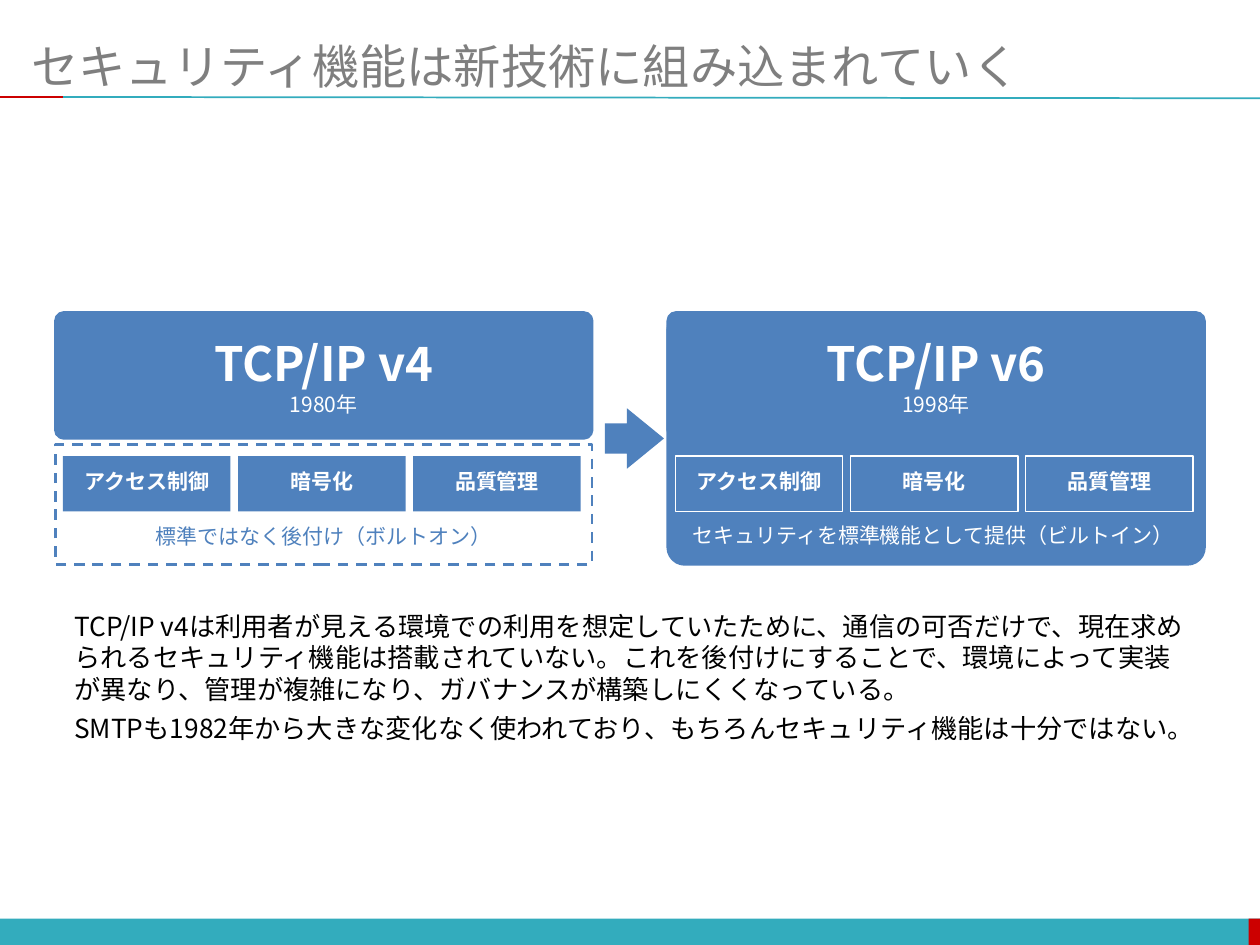
from dataclasses import dataclass

from lxml import etree
from pptx import Presentation
from pptx import util as u
from pptx.dml.color import RGBColor
from pptx.enum import dml, shapes, text
from pptx.oxml.ns import qn


@dataclass(frozen=True)
class Theme:
    font: str = "Noto Sans CJK JP"
    blue: str = "4F81BD"
    teal: str = "33ACBD"
    red: str = "CC0000"
    grey: str = "7F7F7F"
    white: str = "FFFFFF"
    black: str = "000000"
    heading: float = 27
    body: float = 15
    label: float = 12


THEME = Theme()
SHAPE = shapes.MSO_SHAPE
ANCHOR = text.MSO_ANCHOR
CENTER = text.PP_ALIGN.CENTER
INSETS = (0.15, 0.12)


def write(frame, paragraphs, color=THEME.white, size=THEME.label, bold=False,
          align=None, anchor=ANCHOR.TOP, spacing=None, after=None,
          insets=INSETS, wrap=True):
    """Fill a frame; a paragraph is a string or (string, size, bold)."""
    frame.word_wrap = wrap
    frame.vertical_anchor = anchor
    frame.margin_left = frame.margin_right = u.Inches(insets[0])
    frame.margin_top = frame.margin_bottom = u.Inches(insets[1])
    for index, item in enumerate(paragraphs):
        words, points, strong = (item, size, bold) if isinstance(item, str) else item
        para = frame.add_paragraph() if index else frame.paragraphs[0]
        para.alignment = align
        para.line_spacing = spacing
        if after is not None:
            para.space_after = u.Pt(after)
        span = para.add_run()
        span.text = words
        span.font.size = u.Pt(points)
        span.font.bold = strong
        span.font.color.rgb = RGBColor.from_string(color)
        span.font.name = THEME.font
        east_asian = etree.SubElement(span.font._element, qn("a:ea"))
        east_asian.set("typeface", THEME.font)


class Page:
    def __init__(self, deck, theme):
        self.theme = theme
        self.slide = deck.slides.add_slide(deck.slide_layouts[6])

    def shape(self, kind, place, fill, line=None, width=1.5, dash=None, adjust=()):
        box = self.slide.shapes.add_shape(kind, *map(u.Inches, place))
        box.shadow.inherit = False
        box.fill.solid()
        box.fill.fore_color.rgb = RGBColor.from_string(fill)
        if line:
            box.line.color.rgb = RGBColor.from_string(line)
            box.line.width = u.Pt(width)
            if dash:
                box.line.dash_style = dash
        else:
            box.line.fill.background()
        for index, value in enumerate(adjust):
            box.adjustments[index] = value
        return box

    def line(self, start, end, color):
        rule = self.slide.shapes.add_connector(
            shapes.MSO_CONNECTOR.STRAIGHT, *map(u.Inches, start + end))
        rule.line.color.rgb = RGBColor.from_string(color)
        rule.line.width = u.Pt(1)
        etree.SubElement(rule._element.spPr, qn("a:effectLst"))

    def text(self, place, paragraphs, **style):
        box = self.slide.shapes.add_textbox(*map(u.Inches, place))
        write(box.text_frame, paragraphs, **style)

    def panel(self, left, height):
        blue = self.theme.blue
        # The corner radius scales with the shorter side.
        return self.shape(SHAPE.ROUNDED_RECTANGLE, (left, 2.48, 4.26, height),
                          blue, blue, adjust=[0.068])

    def version(self, left, name, year):
        box = self.panel(left, 1)
        write(box.text_frame, [(name, self.theme.heading, True), year],
              align=CENTER, anchor=ANCHOR.MIDDLE)

    def features(self, left, line=None):
        for column, name in enumerate(["アクセス制御", "暗号化", "品質管理"]):
            box = self.shape(SHAPE.RECTANGLE, (left + 1.39 * column, 3.62, 1.33, 0.44),
                             self.theme.blue, line, width=0.75)
            write(box.text_frame, [name], bold=True, align=CENTER, spacing=0.9)


def main():
    deck = Presentation()
    deck.slide_width, deck.slide_height = u.Inches(10), u.Inches(7.5)
    page = Page(deck, THEME)

    page.shape(SHAPE.RECTANGLE, (0, 7.29, 10, 0.22), THEME.teal)
    page.shape(SHAPE.RECTANGLE, (9.91, 7.29, 0.1, 0.22), THEME.red)
    page.line((0.5, 0.77), (10, 0.78), THEME.teal)
    page.line((0, 0.77), (0.5, 0.77), THEME.red)
    page.text((0.25, 0.29, 9.5, 0.46), ["セキュリティ機能は新技術に組み込まれていく"],
              color=THEME.grey, size=THEME.heading, anchor=ANCHOR.MIDDLE,
              insets=(0, 0.05))

    left_panel, right_panel = 0.44, 5.3
    bolt_on = page.shape(SHAPE.RECTANGLE, (left_panel, 3.53, 4.26, 0.95), THEME.white,
                         THEME.blue, dash=dml.MSO_LINE.DASH)
    write(bolt_on.text_frame, ["標準ではなく後付け（ボルトオン）"], color=THEME.blue,
          align=CENTER, anchor=ANCHOR.BOTTOM, spacing=0.9)
    page.features(left_panel + 0.06)
    page.version(left_panel, "TCP/IP v4", "1980年")

    page.panel(right_panel, 2)
    page.features(right_panel + 0.06, line=THEME.white)
    page.version(right_panel, "TCP/IP v6", "1998年")
    page.text((5.32, 4.08, 4.17, 0.43), ["セキュリティを標準機能として提供（ビルトイン）"],
              align=CENTER, spacing=0.9, wrap=False)

    page.shape(SHAPE.RIGHT_ARROW, (4.8, 3.24, 0.47, 0.48), THEME.blue,
               adjust=[0.5, 0.625])
    page.text((left_panel, 4.72, 9.12, 1.32), [
        "TCP/IP v4は利用者が見える環境での利用を想定していたために、通信の可否だけで、"
        "現在求められるセキュリティ機能は搭載されていない。これを後付けにすることで、"
        "環境によって実装が異なり、管理が複雑になり、ガバナンスが構築しにくくなっている。",
        "SMTPも1982年から大きな変化なく使われており、"
        "もちろんセキュリティ機能は十分ではない。",
    ], color=THEME.black, size=THEME.body, after=4.5)

    deck.save("out.pptx")


if __name__ == "__main__":
    main()
